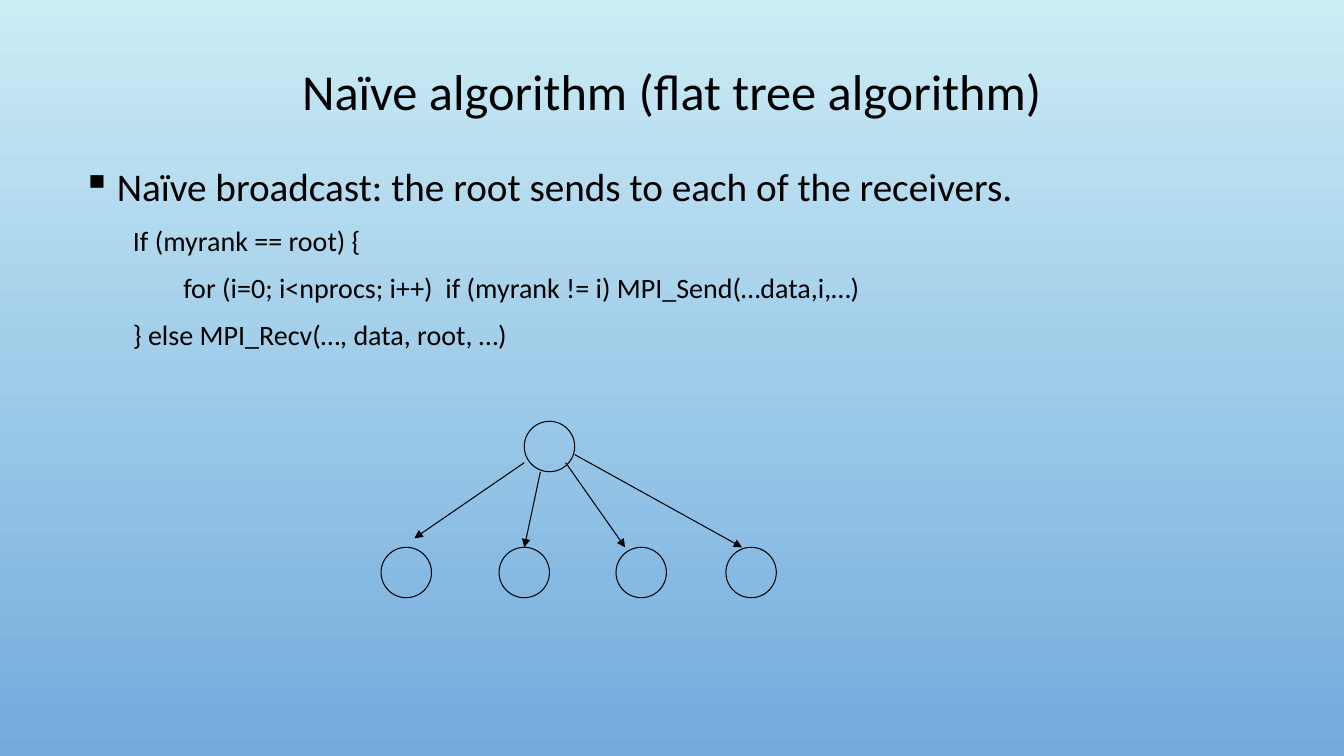
from dataclasses import dataclass

from lxml import etree
from pptx import Presentation
from pptx.dml.color import RGBColor
from pptx.enum.shapes import MSO_CONNECTOR, MSO_SHAPE
from pptx.enum.text import MSO_ANCHOR, MSO_AUTO_SIZE, PP_ALIGN
from pptx.oxml.ns import qn
from pptx.slide import Slide
from pptx.text.text import TextFrame
from pptx.util import Inches, Pt

CENTER, LEFT = PP_ALIGN.CENTER, PP_ALIGN.LEFT
MIDDLE = MSO_ANCHOR.MIDDLE
NO_AUTOFIT = MSO_AUTO_SIZE.NONE
ELLIPSE = MSO_SHAPE.OVAL
STRAIGHT = MSO_CONNECTOR.STRAIGHT

COLORS = {"ink": "000000", "sky_top": "CBECF5", "sky_bottom": "73ABDD"}
FONT = "Calibri"
NODE_SIZE = 0.5
LINE_WIDTH = 0.75
ROOT_TOP, RECEIVER_TOP = 4.18, 5.43


@dataclass(frozen=True)
class Node:
    left: float
    top: float


@dataclass(frozen=True)
class Message:
    start: tuple[float, float]
    end: tuple[float, float]


@dataclass(frozen=True)
class CodeLine:
    text: str
    level: int


CODE = [
    CodeLine("If (myrank == root) {", 1),
    CodeLine("for (i=0; i<nprocs; i++)  if (myrank != i) MPI_Send(…data,i,…)", 2),
    CodeLine("} else MPI_Recv(…, data, root, …)", 1),
]
NODES = [Node(5.2, ROOT_TOP)] + [
    Node(left, RECEIVER_TOP) for left in (3.78, 4.95, 6.11, 7.2)
]
MESSAGES = [
    Message((5.2, 4.59), (4.11, 5.34)),
    Message((5.36, 4.68), (5.2, RECEIVER_TOP)),
    Message((5.61, 4.59), (6.2, RECEIVER_TOP)),
    Message((5.7, 4.51), (7.36, RECEIVER_TOP)),
]


def color(name: str) -> RGBColor:
    return RGBColor.from_string(COLORS[name])


def write(frame: TextFrame, text: str, *, size: float, align: PP_ALIGN = LEFT,
          level: int = 0, margin: float = 0, indent: float = 0, bullet: str = "",
          line_spacing: float = 1.2, space_before: float = 0) -> None:
    """Fill the frame's empty first paragraph, or add a paragraph after the others."""
    paragraph = frame.paragraphs[0]
    if paragraph.text:
        paragraph = frame.add_paragraph()
    paragraph.text = text
    properties = paragraph._p.get_or_add_pPr()
    properties.set("marL", str(Inches(margin)))
    properties.set("indent", str(Inches(indent)))
    if bullet:
        bullet_color = etree.SubElement(properties, qn("a:buClr"))
        etree.SubElement(bullet_color, qn("a:srgbClr"), val=COLORS["ink"])
        etree.SubElement(properties, qn("a:buChar"), char=bullet)
    else:
        etree.SubElement(properties, qn("a:buNone"))
    paragraph.level = level
    paragraph.alignment = align
    paragraph.line_spacing = line_spacing
    paragraph.space_before = Pt(space_before)
    font = paragraph.runs[0].font
    font.name, font.size = FONT, Pt(size)
    font.color.rgb = color("ink")


def paint_background(slide: Slide) -> None:
    fill = slide.background.fill
    fill.gradient()
    fill.gradient_angle = 270
    for stop, position, name in zip(fill.gradient_stops, (0, 1), ("sky_top", "sky_bottom")):
        stop.position = position
        stop.color.rgb = color(name)


def add_title(slide: Slide) -> None:
    title = slide.shapes.title
    title.left, title.top = Inches(1), Inches(0.32)
    title.width, title.height = Inches(11.33), Inches(1.23)
    frame = title.text_frame
    frame.auto_size = NO_AUTOFIT
    frame.vertical_anchor = MIDDLE
    write(frame, "Naïve algorithm (flat tree algorithm)", size=36, align=CENTER,
          line_spacing=0.9)


def add_broadcast_code(slide: Slide) -> None:
    body = slide.shapes.add_textbox(Inches(0.72), Inches(1.47), Inches(11.33), Inches(2.38))
    frame = body.text_frame
    frame.word_wrap = True
    write(frame, "Naïve broadcast: the root sends to each of the receivers.", size=28,
          margin=0.34, indent=-0.34, bullet="▪")
    for line in CODE:
        write(frame, line.text, size=20, level=line.level,
              margin=0.25 + 0.5 * line.level, indent=-0.25, space_before=5)


def add_node(slide: Slide, node: Node) -> None:
    circle = slide.shapes.add_shape(ELLIPSE, Inches(node.left), Inches(node.top),
                                    Inches(NODE_SIZE), Inches(NODE_SIZE))
    circle.shadow.inherit = False
    circle.fill.background()
    circle.line.color.rgb = color("ink")
    circle.line.width = Pt(LINE_WIDTH)


def add_message(slide: Slide, message: Message) -> None:
    """Draw an arrow from the root to a receiver."""
    arrow = slide.shapes.add_connector(
        STRAIGHT, *(Inches(value) for value in message.start + message.end))
    arrow.line.color.rgb = color("ink")
    arrow.line.width = Pt(LINE_WIDTH)
    etree.SubElement(arrow.line._get_or_add_ln(), qn("a:tailEnd"), type="triangle")
    etree.SubElement(arrow._element.spPr, qn("a:effectLst"))


def main() -> None:
    presentation = Presentation()
    presentation.slide_width = Inches(13.33)
    presentation.slide_height = Inches(7.5)
    slide = presentation.slides.add_slide(presentation.slide_layouts.get_by_name("Title Only"))
    paint_background(slide)
    add_title(slide)
    add_broadcast_code(slide)
    for node in NODES:
        add_node(slide, node)
    for message in MESSAGES:
        add_message(slide, message)
    presentation.save("out.pptx")


if __name__ == "__main__":
    main()
